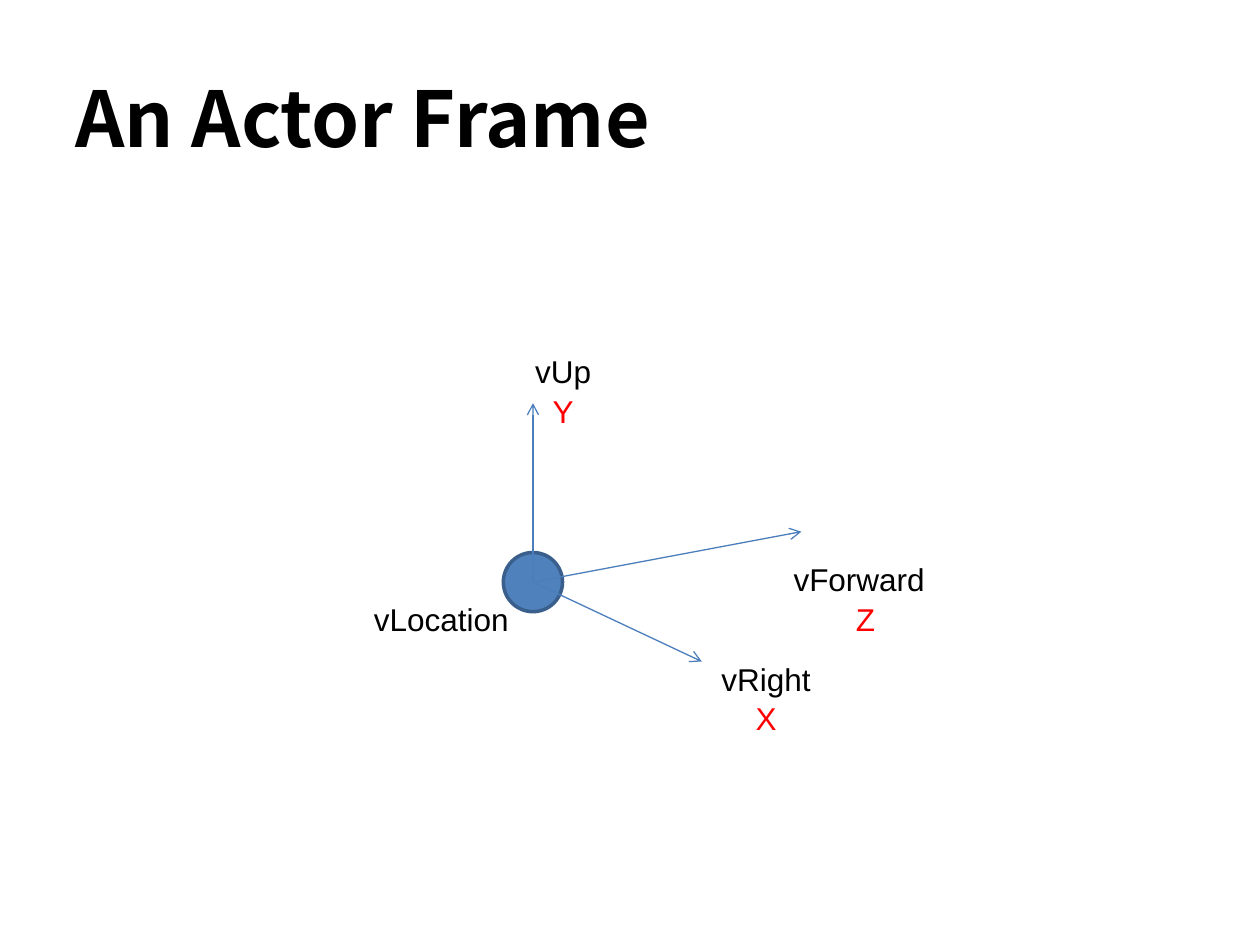
from lxml import etree
from pptx import Presentation
from pptx.dml.color import RGBColor
from pptx.enum.shapes import MSO_CONNECTOR, MSO_SHAPE
from pptx.enum.text import MSO_ANCHOR, PP_ALIGN
from pptx.oxml.ns import qn
from pptx.util import Inches, Pt

STRAIGHT = MSO_CONNECTOR.STRAIGHT
OVAL = MSO_SHAPE.OVAL
MIDDLE = MSO_ANCHOR.MIDDLE
LEFT, CENTER = PP_ALIGN.LEFT, PP_ALIGN.CENTER

COLORS = {"text": "000000", "axis_letter": "FF0000", "actor": "4F81BD",
          "actor_edge": "3A5F8C", "arrow": "4B7EBC"}
TITLE = "An Actor Frame"
ORIGIN = (4.23, 4.62)
ACTOR_SIZE = 0.47
ARROW_TIPS = [(6.36, 4.22), (4.23, 3.2), (5.57, 5.25)]
LABEL_WIDTH = 1.34
# name, axis letter, left, top, alignment of the name
LABELS = [
    ("vForward", "Z", 6.2, 4.38, LEFT),
    ("vUp", "Y", 3.8, 2.73, CENTER),
    ("vLocation", None, 2.87, 4.7, LEFT),
    ("vRight", "X", 5.41, 5.17, CENTER),
]


def rgb(name):
    return RGBColor.from_string(COLORS[name])


def add_run(para, text, size, font, color, bold=False):
    span = para.add_run()
    span.text = text
    span.font.size = Pt(size)
    span.font.name = font
    span.font.bold = bold
    span.font.color.rgb = rgb(color)
    return span


def add_text_shadow(span):
    properties = span.font.fill._xPr
    effects = etree.Element(qn("a:effectLst"))
    shadow = etree.SubElement(effects, qn("a:outerShdw"), blurRad="38100",
                              dist="38100", dir="2700000", algn="tl")
    color = etree.SubElement(shadow, qn("a:srgbClr"), val="000000")
    etree.SubElement(color, qn("a:alpha"), val="43000")
    properties.find(qn("a:solidFill")).addnext(effects)


def add_title(page):
    title = page.shapes.title
    title.left, title.top = Inches(0.5), Inches(0.3)
    title.width, title.height = Inches(7.18), Inches(1.25)
    title.text_frame.vertical_anchor = MIDDLE
    para = title.text_frame.paragraphs[0]
    para.alignment = LEFT
    add_text_shadow(add_run(para, TITLE, 44, "Noto Sans CJK SC", "text", bold=True))


def add_actor(group):
    left, top = (Inches(center - ACTOR_SIZE / 2) for center in ORIGIN)
    actor = group.shapes.add_shape(OVAL, left, top, Inches(ACTOR_SIZE), Inches(ACTOR_SIZE))
    actor.shadow.inherit = False
    actor.fill.solid()
    actor.fill.fore_color.rgb = rgb("actor")
    actor.line.color.rgb = rgb("actor_edge")
    actor.line.width = Pt(2)


def add_arrow(group, tip):
    arrow = group.shapes.add_connector(STRAIGHT, *map(Inches, ORIGIN + tip))
    arrow.line.color.rgb = rgb("arrow")
    arrow.line.width = Pt(0.75)
    etree.SubElement(arrow.line._get_or_add_ln(), qn("a:tailEnd"), type="arrow")
    etree.SubElement(arrow._element.spPr, qn("a:effectLst"))


def add_label(group, name, letter, left, top, alignment):
    height = 0.71 if letter else 0.4
    box = group.shapes.add_textbox(*map(Inches, (left, top, LABEL_WIDTH, height)))
    frame = box.text_frame
    frame.word_wrap = True
    para = frame.paragraphs[0]
    para.alignment = alignment
    para.line_spacing = 1.05
    add_run(para, name, 18, "Arial", "text")
    if letter:
        para = frame.add_paragraph()
        para.alignment = CENTER
        para.line_spacing = 1.05
        add_run(para, letter, 18, "Arial", "axis_letter")


def main():
    deck = Presentation()
    deck.slide_width, deck.slide_height = Inches(10), Inches(7.5)
    page = deck.slides.add_slide(deck.slide_layouts.get_by_name("Title Only"))
    add_title(page)
    group = page.shapes.add_group_shape()
    add_actor(group)
    for tip in ARROW_TIPS:
        add_arrow(group, tip)
    for label in LABELS:
        add_label(group, *label)
    deck.save("out.pptx")


if __name__ == "__main__":
    main()
